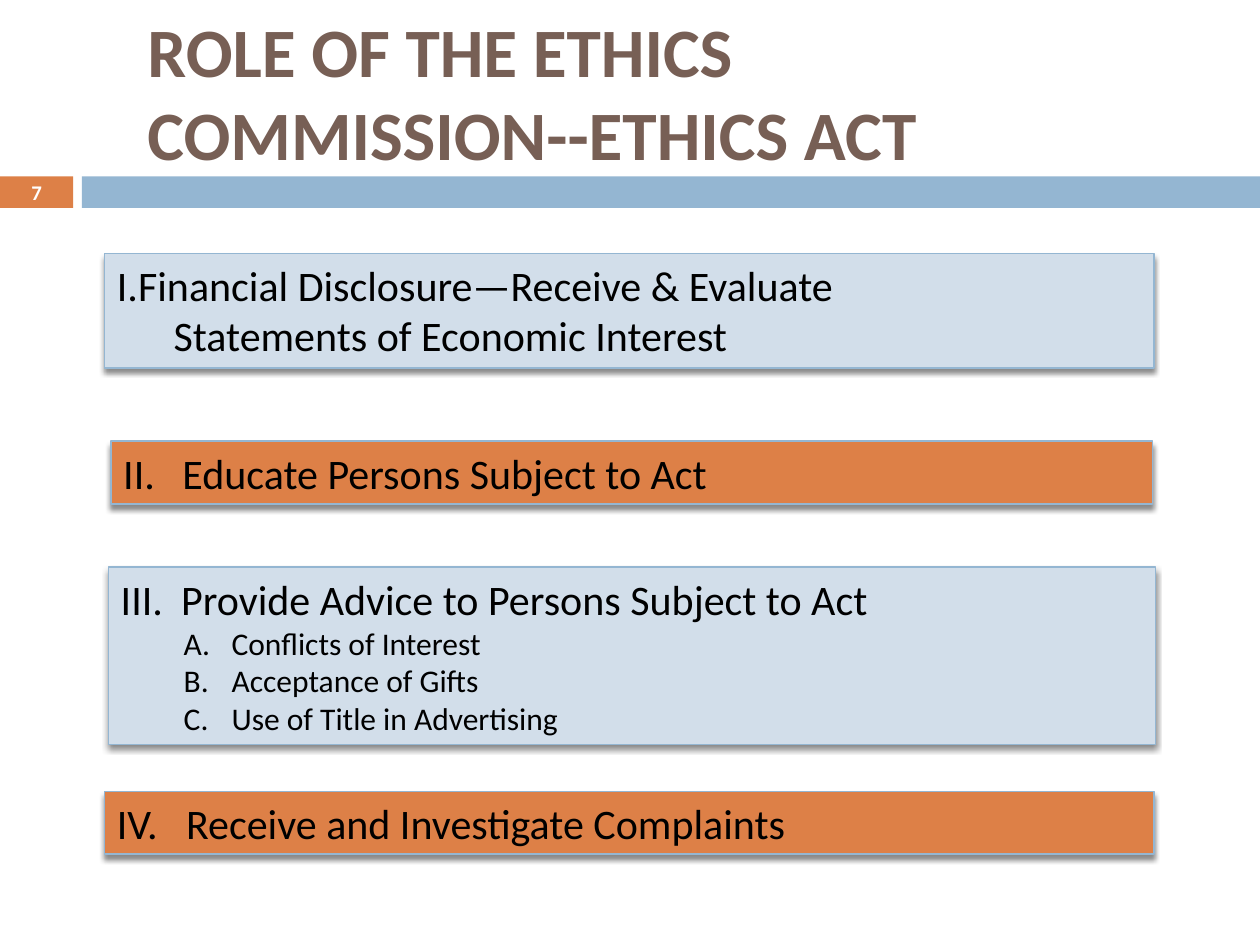
import pptx
import pptx.dml.color
import pptx.enum.shapes
import pptx.enum.text
import pptx.oxml
import pptx.oxml.ns
import pptx.util

RGBColor = pptx.dml.color.RGBColor
ORANGE = RGBColor(0xDD, 0x80, 0x47)
BLUE = RGBColor(0x94, 0xB6, 0xD2)
PALE_BLUE = RGBColor(0xD2, 0xDE, 0xEA)
BROWN = RGBColor(0x77, 0x5F, 0x55)
BLACK = RGBColor(0, 0, 0)
WHITE = RGBColor(0xFF, 0xFF, 0xFF)

WIDTH, HEIGHT = 10, 7.5
ALIGN = pptx.enum.text.PP_ALIGN
MIDDLE = pptx.enum.text.MSO_ANCHOR.MIDDLE
NO_FIT = pptx.enum.text.MSO_AUTO_SIZE.NONE
SHADOW = (
    f'<a:effectLst {pptx.oxml.ns.nsdecls("a")}>'
    '<a:outerShdw blurRad="38100" dist="30480" dir="5400000" rotWithShape="0">'
    '<a:srgbClr val="000000"><a:alpha val="45000"/></a:srgbClr>'
    '</a:outerShdw></a:effectLst>'
)


def inches(*lengths):
    return [pptx.util.Inches(length) for length in lengths]


def add_span(para, text, size, colour, bold=False):
    span = para.add_run()
    span.text = text
    span.font.name = "Calibri"
    span.font.size = pptx.util.Pt(size)
    span.font.color.rgb = colour
    span.font.bold = bold


def set_indent(para, margin, hanging=0, numbering=None):
    properties = para._p.get_or_add_pPr()
    properties.set("marL", str(pptx.util.Inches(margin)))
    properties.set("indent", str(-pptx.util.Inches(hanging)))
    if numbering:
        bullet = pptx.oxml.parse_xml(
            f'<a:buAutoNum {pptx.oxml.ns.nsdecls("a")} type="{numbering}"/>')
        properties.append(bullet)


def add_panel(page, box, fill):
    panel = page.shapes.add_shape(
        pptx.enum.shapes.MSO_SHAPE.RECTANGLE, *inches(*box))
    panel.shadow.inherit = False
    panel.fill.solid()
    panel.fill.fore_color.rgb = fill
    panel.line.fill.background()
    return panel


def add_title(page, box, text):
    title = page.shapes.title
    title.left, title.top, title.width, title.height = inches(*box)
    frame = title.text_frame
    frame.auto_size = NO_FIT
    frame.word_wrap = True
    frame.vertical_anchor = MIDDLE
    para = frame.paragraphs[0]
    para.alignment = ALIGN.LEFT
    set_indent(para, 0.4)
    add_span(para, text, 39.6, BROWN, bold=True)


def add_number_band(page, box, number):
    left, top, width, height = box
    number_width, gap = 0.058 * width, 0.007 * width
    rest = number_width + gap
    add_panel(page, (left + rest, top, width - rest, height), BLUE)
    panel = add_panel(page, (left, top, number_width, height), ORANGE)
    frame = panel.text_frame
    frame.margin_top = frame.margin_bottom = 0
    frame.vertical_anchor = MIDDLE
    para = frame.paragraphs[0]
    para.alignment = ALIGN.CENTER
    add_span(para, number, 11.9, WHITE, bold=True)


def add_role(page, box, fill, lines):
    panel = add_panel(page, box, fill)
    panel.line.color.rgb = BLUE
    panel.line.width = pptx.util.Pt(0.79)
    properties = panel._element.spPr
    properties.remove(properties.find(pptx.oxml.ns.qn("a:effectLst")))
    properties.append(pptx.oxml.parse_xml(SHADOW))
    frame = panel.text_frame
    frame.word_wrap = True
    frame.vertical_anchor = pptx.enum.text.MSO_ANCHOR.TOP
    for index, (text, size, margin, hanging, numbering) in enumerate(lines):
        para = frame.add_paragraph() if index else frame.paragraphs[0]
        para.alignment = ALIGN.LEFT
        set_indent(para, margin, hanging, numbering)
        add_span(para, text, size, BLACK)


def main():
    deck = pptx.Presentation()
    deck.slide_width, deck.slide_height = inches(WIDTH, HEIGHT)
    page = deck.slides.add_slide(deck.slide_layouts[5])

    add_number_band(page, (0, 1.4, WIDTH, 0.25), "7")
    add_title(page, (0.67, 0.08, 8.83, 1.29),
              "ROLE OF THE ETHICS COMMISSION--ETHICS ACT")

    advice = ["Conflicts of Interest", "Acceptance of Gifts",
              "Use of Title in Advertising"]
    roles = [
        ((0.83, 2.01, 8.33, 0.91), PALE_BLUE, [
            ("Financial Disclosure—Receive & Evaluate", 24, 0.16, 0.16,
             "romanUcPeriod"),
            ("Statements of Economic Interest", 24, 0.45, 0, None)]),
        ((0.88, 3.5, 8.27, 0.5), ORANGE, [
            ("II.\tEducate Persons Subject to Act", 24, 0.47, 0.47, None)]),
        ((0.86, 4.5, 8.31, 1.41), PALE_BLUE, [
            ("III.\tProvide Advice to Persons Subject to Act", 24, 0.48, 0.48,
             None),
            *[(text, 18, 0.88, 0.38, "alphaUcPeriod") for text in advice]]),
        ((0.83, 6.28, 8.33, 0.5), ORANGE, [
            ("IV.\tReceive and Investigate Complaints", 24, 0.55, 0.55, None)]),
    ]
    for box, fill, lines in roles:
        add_role(page, box, fill, lines)

    deck.save("out.pptx")


if __name__ == "__main__":
    main()
